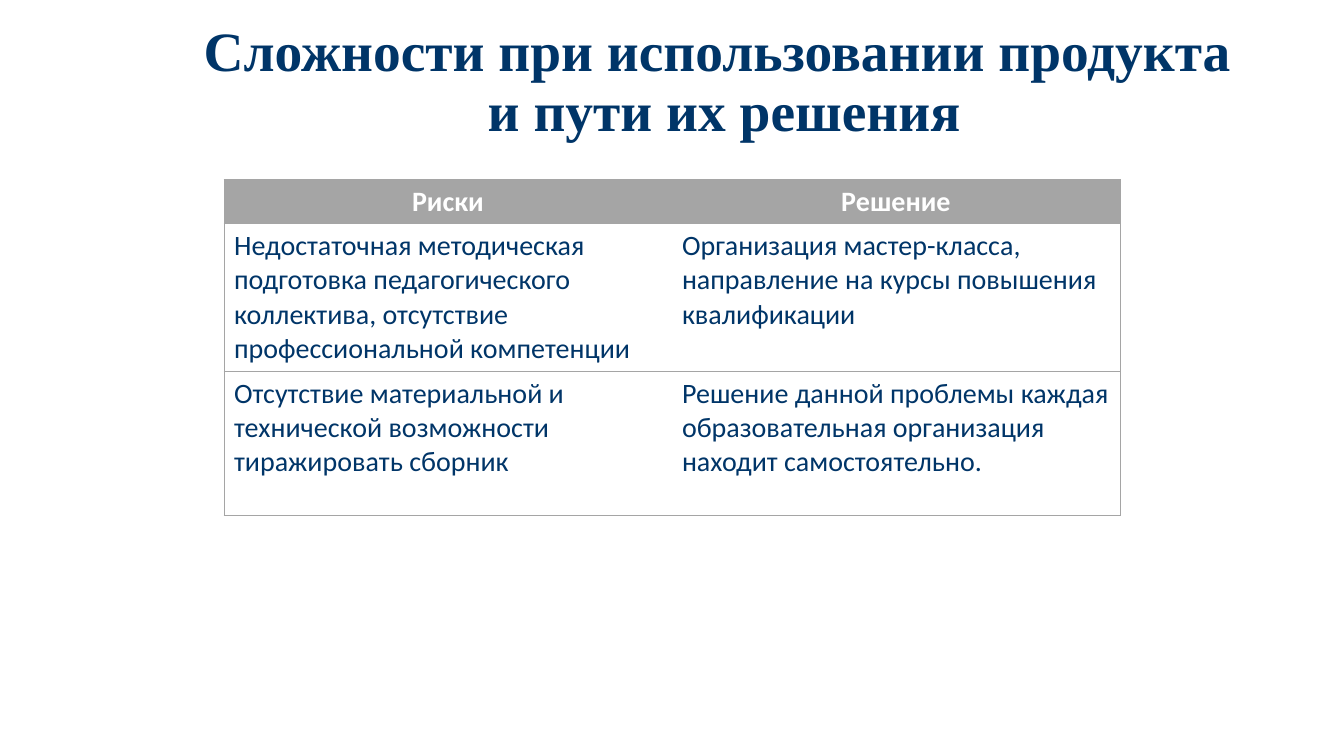
from lxml import etree
from pptx import Presentation
from pptx.dml.color import RGBColor
from pptx.enum import text
from pptx.oxml import ns
from pptx.util import Pt

NAVY, GRAY, WHITE = "003568", "A5A5A5", "FFFFFF"


def color(value):
    return RGBColor.from_string(value)


def add_border(cell, side, visible):
    properties = cell._tc.get_or_add_tcPr()
    line = etree.SubElement(properties, ns.qn(f"a:ln{side}"), w=str(Pt(0.5)))
    if visible:
        fill = etree.SubElement(line, ns.qn("a:solidFill"))
        etree.SubElement(fill, ns.qn("a:srgbClr"), val=GRAY)
    else:
        etree.SubElement(line, ns.qn("a:noFill"))


presentation = Presentation()
presentation.slide_width, presentation.slide_height = Pt(960), Pt(540)
slide = presentation.slides.add_slide(presentation.slide_layouts[6])

# Title
title = slide.shapes.add_textbox(Pt(130.3), Pt(28.8), Pt(764), Pt(61.2))
frame = title.text_frame
frame.word_wrap = True
frame.vertical_anchor = text.MSO_ANCHOR.MIDDLE
paragraph = frame.paragraphs[0]
paragraph.text = "Сложности при использовании продукта\v и пути их решения"
paragraph.alignment = text.PP_ALIGN.CENTER
paragraph.line_spacing = 0.9
title_format = {"name": "Times New Roman", "size": Pt(39.6), "bold": True}
for name, value in title_format.items():
    setattr(paragraph.font, name, value)
paragraph.font.color.rgb = color(NAVY)

# Table of risks and solutions
rows = [
    ("Риски", "Решение"),
    ("Недостаточная методическая подготовка педагогического коллектива, "
     "отсутствие профессиональной компетенции",
     "Организация мастер-класса, направление на курсы повышения квалификации"),
    ("Отсутствие материальной и технической возможности тиражировать сборник",
     "Решение данной проблемы каждая образовательная организация находит "
     "самостоятельно."),
]
row_heights = [31.6, 105.4, 103]
table = slide.shapes.add_table(
    len(rows), 2, Pt(160), Pt(128.2), Pt(640), Pt(sum(row_heights))).table
table.horz_banding = False

for row_index, (row, height) in enumerate(zip(rows, row_heights)):
    table.rows[row_index].height = Pt(height)
    header = row_index == 0
    for column_index, wording in enumerate(row):
        cell = table.cell(row_index, column_index)
        # Outer frame and row lines only
        visible = {"L": column_index == 0, "R": column_index == 1,
                   "T": True, "B": True}
        for side, shown in visible.items():
            add_border(cell, side, shown)
        if header:
            cell.fill.solid()
            cell.fill.fore_color.rgb = color(GRAY)
        else:
            cell.fill.background()
        cell.text = wording
        paragraph = cell.text_frame.paragraphs[0]
        paragraph.alignment = (
            text.PP_ALIGN.CENTER if header else text.PP_ALIGN.LEFT)
        cell_format = {"name": "Calibri", "size": Pt(20), "bold": header}
        for name, value in cell_format.items():
            setattr(paragraph.font, name, value)
        paragraph.font.color.rgb = color(WHITE if header else NAVY)

presentation.save("out.pptx")
